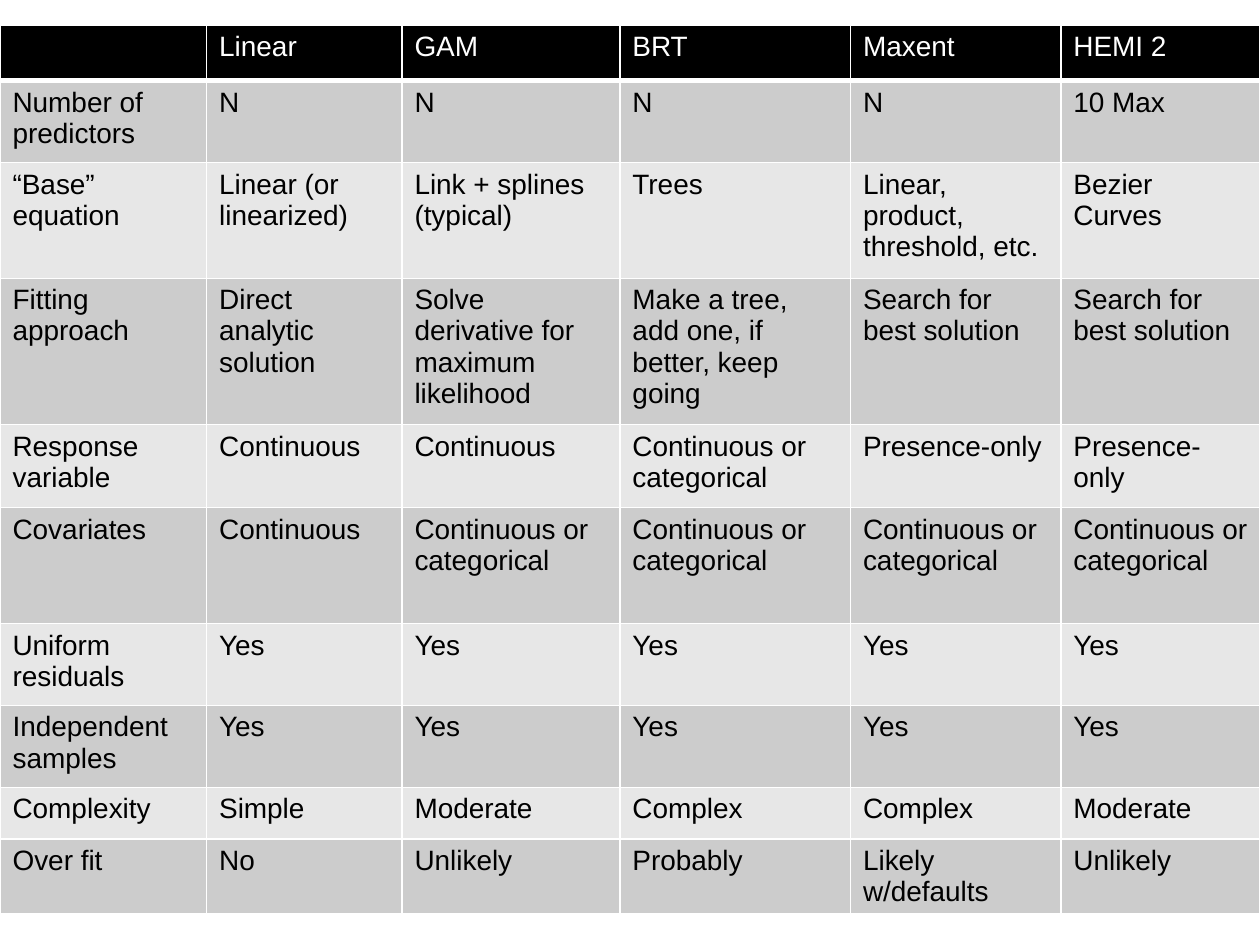
"""Build a slide comparing five modelling methods in one table."""
from dataclasses import dataclass

import lxml.etree
import pptx
import pptx.dml.color
import pptx.oxml.ns
import pptx.table
import pptx.util

Inches = pptx.util.Inches
COLORS = {
    "head": "000000",
    "dark": "CCCCCC",
    "light": "E7E7E7",
    "white": "FFFFFF",
    "text": "000000",
}
FONT = "Arial"
SIZE = 16
WIDTHS = [1.64, 1.55, 1.73, 1.83, 1.67, 1.58]
MIXED = "Continuous or categorical"


@dataclass
class Row:
    """Height and texts of one table row."""
    height: float
    texts: list[str]


ROWS = [
    Row(0.44, ["", "Linear", "GAM", "BRT", "Maxent", "HEMI 2"]),
    Row(0.65, ["Number of predictors"] + ["N"] * 4 + ["10 Max"]),
    Row(0.92, ["“Base” equation", "Linear (or linearized)",
               "Link + splines (typical)", "Trees",
               "Linear, product, threshold, etc.", "Bezier Curves"]),
    Row(1.16, ["Fitting approach", "Direct analytic solution",
               "Solve derivative for maximum likelihood",
               "Make a tree, add one, if better, keep going",
               "Search for best solution", "Search for best solution"]),
    Row(0.66, ["Response variable", "Continuous", "Continuous", MIXED,
               "Presence-only", "Presence-only"]),
    Row(0.92, ["Covariates", "Continuous"] + [MIXED] * 4),
    Row(0.65, ["Uniform residuals"] + ["Yes"] * 5),
    Row(0.65, ["Independent samples"] + ["Yes"] * 5),
    Row(0.41, ["Complexity", "Simple", "Moderate", "Complex", "Complex",
               "Moderate"]),
    Row(0.41, ["Over fit", "No", "Unlikely", "Probably", "Likely w/defaults",
               "Unlikely"]),
]


def color(name: str) -> pptx.dml.color.RGBColor:
    """Return a named colour."""
    return pptx.dml.color.RGBColor.from_string(COLORS[name])


def edge(cell: pptx.table._Cell, side: str, width: float) -> None:
    """Add a white line on one side of a cell."""
    qn = pptx.oxml.ns.qn
    props = cell._tc.get_or_add_tcPr()
    line = lxml.etree.SubElement(props, qn(f"a:ln{side}"),
                                 w=str(pptx.util.Pt(width)))
    fill = lxml.etree.SubElement(line, qn("a:solidFill"))
    lxml.etree.SubElement(fill, qn("a:srgbClr"), val=COLORS["white"])


def draw_cell(cell: pptx.table._Cell, text: str, fill: str, head: bool) -> None:
    """Fill, border and letter one cell."""
    for side in "LRTB":
        edge(cell, side, 3 if head and side == "B" else 1)
    cell.fill.solid()
    cell.fill.fore_color.rgb = color(fill)
    cell.text_frame.text = text
    font = cell.text_frame.paragraphs[0].font
    for item in [font] + [run.font for run in cell.text_frame.paragraphs[0].runs]:
        item.name = FONT
        item.size = pptx.util.Pt(SIZE)
        item.bold = False
        item.color.rgb = color("white" if head else "text")


def main() -> None:
    """Create the deck and save it."""
    deck = pptx.Presentation()
    deck.slide_width, deck.slide_height = Inches(10), Inches(7.5)
    slide = deck.slides.add_slide(deck.slide_layouts[6])
    frame = slide.shapes.add_table(len(ROWS), len(WIDTHS), Inches(0),
                                   Inches(0.2), Inches(10), Inches(7.1))
    table = frame.table
    for col, width in zip(table.columns, WIDTHS):
        col.width = Inches(width)
    for i, row in enumerate(ROWS):
        table.rows[i].height = Inches(row.height)
        fill = "head" if i == 0 else "dark" if i % 2 else "light"
        for j, text in enumerate(row.texts):
            draw_cell(table.cell(i, j), text, fill, i == 0)
    frame.height = Inches(7.1)
    deck.save("out.pptx")


if __name__ == "__main__":
    main()
